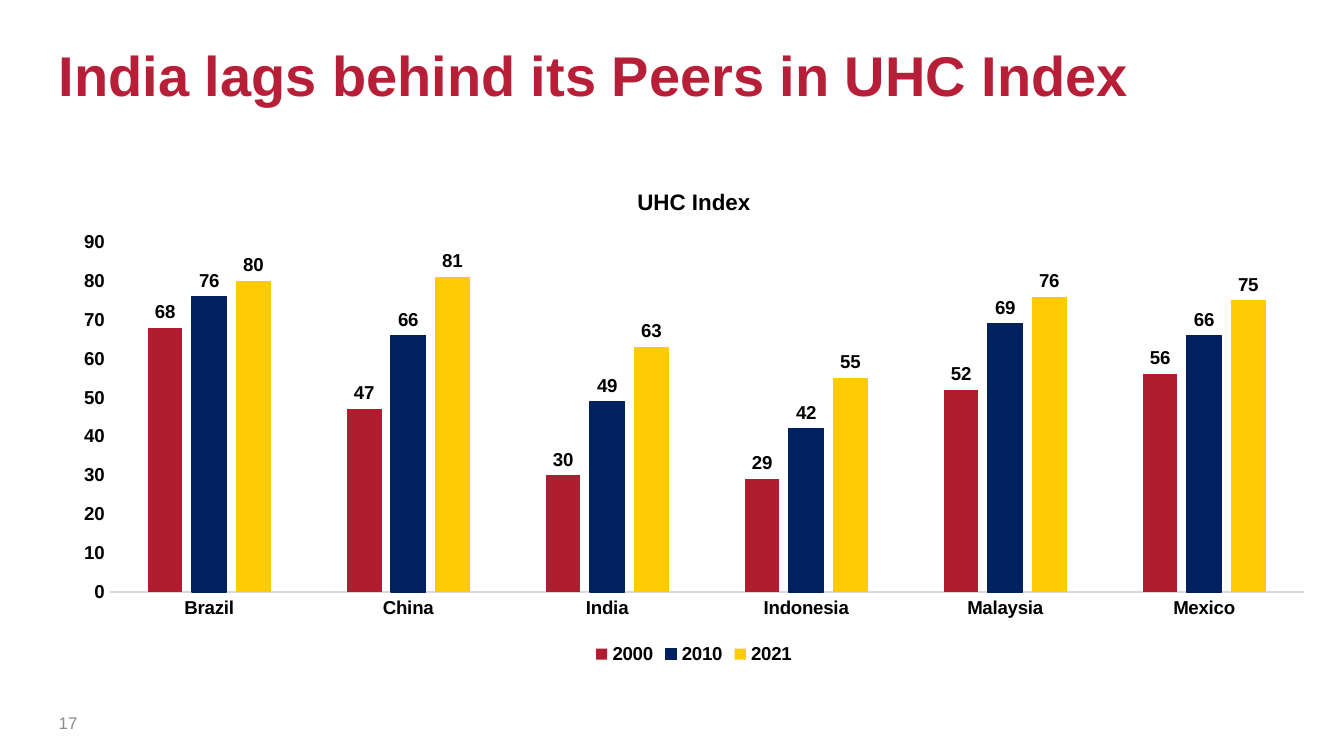
from pptx import Presentation
from pptx.chart.data import CategoryChartData
from pptx.dml.color import RGBColor
from pptx.enum.chart import XL_CHART_TYPE as ChartType, XL_LABEL_POSITION as LabelPosition
from pptx.enum.chart import XL_LEGEND_POSITION as LegendPosition, XL_TICK_MARK as TickMark
from pptx.enum.text import MSO_ANCHOR as Anchor
from pptx.util import Pt

COLORS = {"title": "B71F38", "number": "8C8C8C", "text": "000000", "axis": "D9D9D9",
          "2000": "AF1D30", "2010": "002060", "2021": "FFCB05"}
COUNTRIES = ["Brazil", "China", "India", "Indonesia", "Malaysia", "Mexico"]
UHC_INDEX = {
    "2000": [68, 47, 30, 29, 52, 56],
    "2010": [76, 66, 49, 42, 69, 66],
    "2021": [80, 81, 63, 55, 76, 75],
}


def style_font(font, size, color, bold=True):
    font.name = "Arial"
    font.size = Pt(size)
    font.bold = bold
    font.color.rgb = RGBColor.from_string(COLORS[color])


def add_text(slide, text, left, top, width, height):
    frame = slide.shapes.add_textbox(Pt(left), Pt(top), Pt(width), Pt(height)).text_frame
    frame.word_wrap = True
    frame.vertical_anchor = Anchor.MIDDLE
    frame.margin_left = frame.margin_right = 0
    frame.margin_top = frame.margin_bottom = Pt(4)
    paragraph = frame.paragraphs[0]
    paragraph.text = text
    return paragraph


presentation = Presentation()
presentation.slide_width, presentation.slide_height = Pt(720), Pt(405)
slide = presentation.slides.add_slide(presentation.slide_layouts[6])

# Title
title = add_text(slide, "India lags behind its Peers in UHC Index", 31.5, 7, 680.5, 70.5)
title.line_spacing = 0.9
style_font(title.font, 30, "title")

# Slide number
number = add_text(slide, "17", 31.5, 376, 31, 22)
number.space_after = Pt(6)
style_font(number.font, 9, "number", bold=False)

# Chart
data = CategoryChartData(number_format="#,##0")
data.categories = COUNTRIES
for year, values in UHC_INDEX.items():
    data.add_series(year, values)
chart = slide.shapes.add_chart(ChartType.COLUMN_CLUSTERED, Pt(31.5), Pt(89.5),
                               Pt(680.5), Pt(269.5), data).chart
style_font(chart.font, 10, "text")

# Chart title and legend
chart.has_title = True
chart_title = chart.chart_title.text_frame.paragraphs[0]
chart_title.text = "UHC Index"
style_font(chart_title.font, 12, "text")
chart.has_legend = True
chart.legend.position = LegendPosition.BOTTOM
chart.legend.include_in_layout = False
style_font(chart.legend.font, 10, "text")

# Axes
for axis in (chart.category_axis, chart.value_axis):
    axis.major_tick_mark = axis.minor_tick_mark = TickMark.NONE
    axis.has_major_gridlines = False
    style_font(axis.tick_labels.font, 10, "text")
chart.category_axis.format.line.color.rgb = RGBColor.from_string(COLORS["axis"])
chart.category_axis.format.line.width = Pt(0.75)
value_axis = chart.value_axis
value_axis.format.line.fill.background()
value_axis.minimum_scale, value_axis.maximum_scale, value_axis.major_unit = 0, 90, 10

# Columns and their labels
plot = chart.plots[0]
plot.gap_width, plot.overlap = 219, -27
plot.vary_by_categories = False
for series in plot.series:
    color = RGBColor.from_string(COLORS[series.name])
    series.format.fill.solid()
    series.format.fill.fore_color.rgb = color
    if series.name == "2010":
        series.format.line.color.rgb = color
        series.format.line.width = Pt(0.75)
    else:
        series.format.line.fill.background()
    labels = series.data_labels
    labels.show_value = True
    labels.number_format = "#,##0"
    labels.number_format_is_linked = False
    labels.position = LabelPosition.OUTSIDE_END
    style_font(labels.font, 10, "text")

presentation.save("out.pptx")
